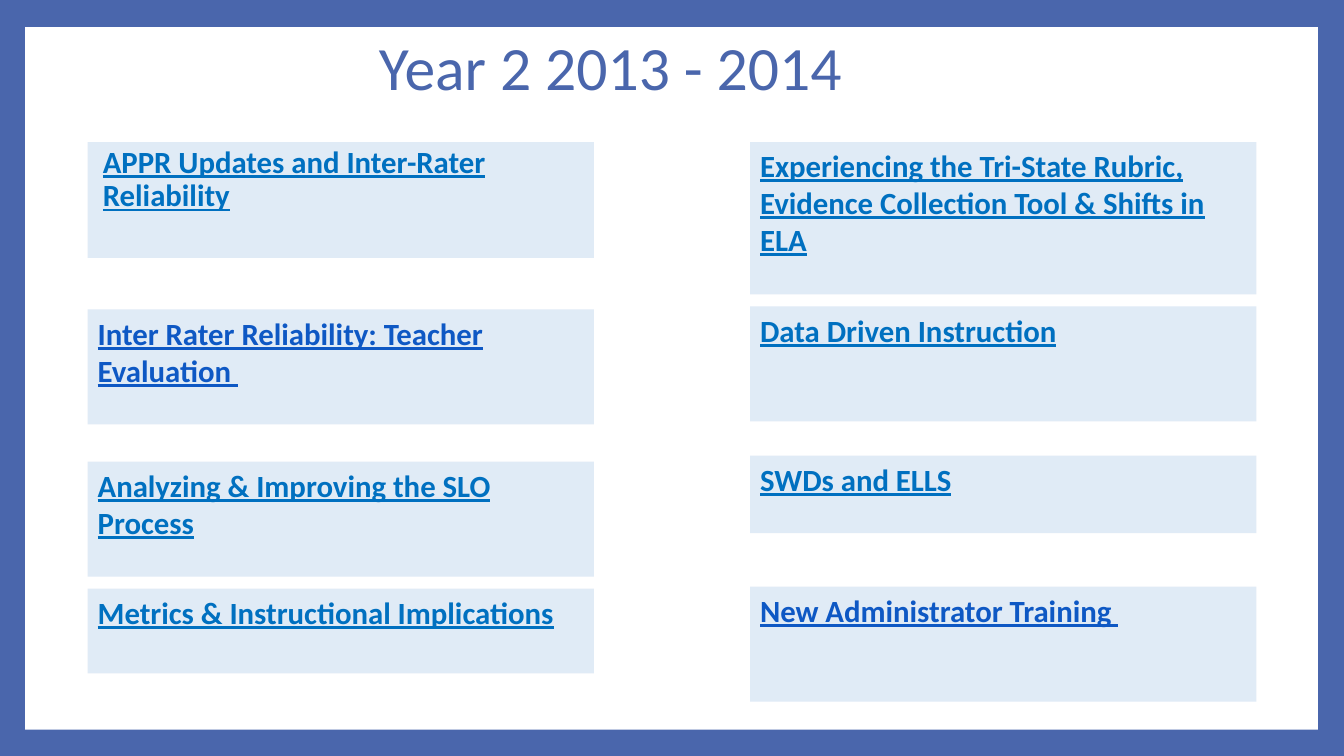
from pptx import Presentation
from pptx.dml.color import RGBColor
from pptx.enum.shapes import MSO_SHAPE
from pptx.enum.text import MSO_ANCHOR, PP_ALIGN
from pptx.util import Inches, Pt

BLUE, WHITE, PALE = "4A66AC", "FFFFFF", "E0EBF6"
SKY, ROYAL = "0070C0", "0E58C4"
BOX_WIDTH = 5.02
LEFT_COLUMN, RIGHT_COLUMN = 0.87, 7.44


def add_box(left, top, width, height, color):
    box = slide.shapes.add_shape(MSO_SHAPE.RECTANGLE, Inches(left), Inches(top),
                                 Inches(width), Inches(height))
    box.shadow.inherit = False
    box.fill.solid()
    box.fill.fore_color.rgb = RGBColor.from_string(color)
    box.line.fill.background()
    return box


def add_text(paragraph, text, size, color, emphasis=False):
    """Add a run; emphasis makes it bold and underlined."""
    run = paragraph.add_run()
    run.text = text
    run.font.name = "Calibri"
    run.font.size = Pt(size)
    run.font.bold = run.font.underline = emphasis
    run.font.color.rgb = RGBColor.from_string(color)


presentation = Presentation()
presentation.slide_width = Inches(13.33)
presentation.slide_height = Inches(7.5)
slide = presentation.slides.add_slide(presentation.slide_layouts[5])
slide.background.fill.solid()
slide.background.fill.fore_color.rgb = RGBColor.from_string(BLUE)

# White panel behind the title
title = slide.shapes.title
panel = add_box(0.25, 0.27, 12.82, 6.97, WHITE)
title._element.addprevious(panel._element)

title.left, title.top = Inches(0.14), Inches(0)
title.width, title.height = Inches(11.97), Inches(1.41)
title.text_frame.vertical_anchor = MSO_ANCHOR.MIDDLE
heading = title.text_frame.paragraphs[0]
heading.alignment = PP_ALIGN.CENTER
heading.line_spacing = 0.9
add_text(heading, "Year 2 2013 - 2014 ", 44, BLUE)

# Topics of each column: top, height, text, colour
columns = {
    LEFT_COLUMN: [
        (1.41, 1.15, "APPR Updates and Inter-Rater Reliability", SKY),
        (3.07, 1.14, "Inter Rater Reliability: Teacher Evaluation ", ROYAL),
        (4.58, 1.14, "Analyzing & Improving the SLO Process", SKY),
        (5.84, 0.84, "Metrics & Instructional Implications", SKY),
    ],
    RIGHT_COLUMN: [
        (1.41, 1.51, "Experiencing the Tri-State Rubric, Evidence Collection "
                     "Tool & Shifts in ELA", SKY),
        (3.04, 1.14, "Data Driven Instruction", SKY),
        (4.52, 0.77, "SWDs and ELLS", SKY),
        (5.82, 1.14, "New Administrator Training ", ROYAL),
    ],
}
topic_frames = []
for left, topics in columns.items():
    for top, height, text, color in topics:
        frame = add_box(left, top, BOX_WIDTH, height, PALE).text_frame
        frame.word_wrap = True
        frame.vertical_anchor = MSO_ANCHOR.TOP
        frame.paragraphs[0].alignment = PP_ALIGN.LEFT
        add_text(frame.paragraphs[0], text, 22, color, emphasis=True)
        topic_frames.append(frame)

# The first topic is set tighter and slightly indented
topic_frames[0].margin_left = Inches(0.15)
topic_frames[0].paragraphs[0].line_spacing = 0.9

presentation.save("out.pptx")
